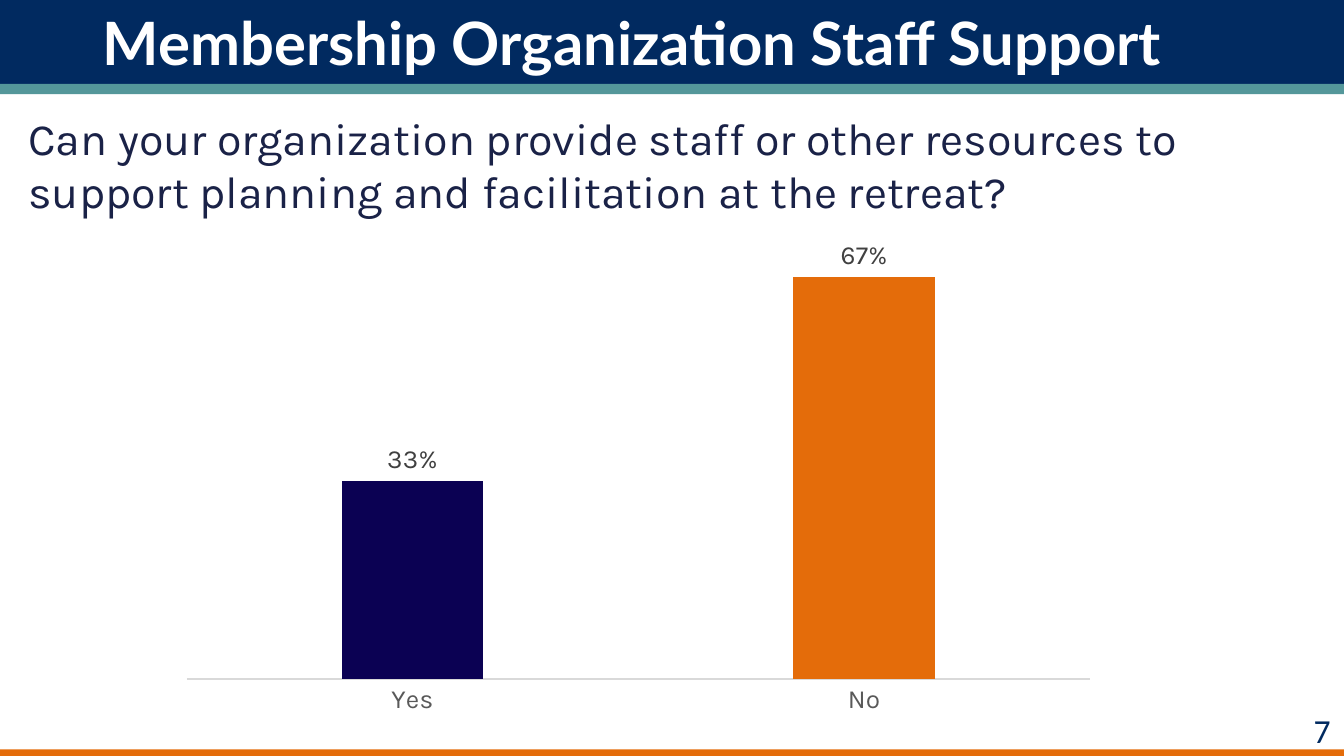
from pptx import Presentation
from pptx.chart.data import CategoryChartData
from pptx.dml.color import RGBColor
from pptx.enum.chart import XL_CHART_TYPE, XL_LABEL_POSITION, XL_TICK_MARK
from pptx.enum.shapes import MSO_SHAPE
from pptx.enum.text import MSO_ANCHOR, PP_ALIGN
from pptx.util import Pt

RECTANGLE = MSO_SHAPE.RECTANGLE
COLUMNS = XL_CHART_TYPE.COLUMN_CLUSTERED
OUTSIDE_END = XL_LABEL_POSITION.OUTSIDE_END
NO_TICKS = XL_TICK_MARK.NONE
TOP, MIDDLE = MSO_ANCHOR.TOP, MSO_ANCHOR.MIDDLE
LEFT, RIGHT = PP_ALIGN.LEFT, PP_ALIGN.RIGHT

WHITE = RGBColor(0xFF, 0xFF, 0xFF)
BLACK = RGBColor(0x00, 0x00, 0x00)
NAVY = RGBColor(0x01, 0x2A, 0x60)
TEAL = RGBColor(0x54, 0x97, 0x9A)
ORANGE = RGBColor(0xE4, 0x6C, 0x0A)
INK = RGBColor(0x1A, 0x22, 0x47)
INDIGO = RGBColor(0x0B, 0x01, 0x53)
AXIS_GRAY = RGBColor(0xD9, 0xD9, 0xD9)
CATEGORY_GRAY = RGBColor(0x59, 0x59, 0x59)
LABEL_GRAY = RGBColor(0x40, 0x40, 0x40)

SLIDE_WIDTH, SLIDE_HEIGHT = 720, 405


def style_font(font, name, size, color, bold=False):
    font.name = name
    font.size = Pt(size)
    font.color.rgb = color
    font.bold = bold


def write_text(frame, text, *, font, size, color, bold=False, align=LEFT,
               anchor=TOP, inset_left=7.2, inset_top=3.6):
    frame.word_wrap = True
    frame.vertical_anchor = anchor
    frame.margin_left = Pt(inset_left)
    frame.margin_right = Pt(7.2)
    frame.margin_top = Pt(inset_top)
    frame.margin_bottom = Pt(3.6)
    paragraph = frame.paragraphs[0]
    paragraph.alignment = align
    run = paragraph.add_run()
    run.text = text
    style_font(run.font, font, size, color, bold)


class SurveySlide:
    heading_font = "Lato"
    body_font = "Karla"
    number_font = "Calibri"
    chart_size = 14

    def __init__(self, presentation):
        self.slide = presentation.slides.add_slide(presentation.slide_layouts[6])

    def band(self, top, height, color):
        band = self.slide.shapes.add_shape(
            RECTANGLE, 0, Pt(top), Pt(SLIDE_WIDTH), Pt(height))
        band.shadow.inherit = False
        band.fill.solid()
        band.fill.fore_color.rgb = color
        band.line.fill.background()

    def text(self, left, top, width, height, text, **style):
        box = self.slide.shapes.add_textbox(
            Pt(left), Pt(top), Pt(width), Pt(height))
        write_text(box.text_frame, text, **style)

    def column_chart(self, left, top, width, height, shares, colors):
        data = CategoryChartData(number_format="0%")
        data.categories = list(shares)
        data.add_series("Series 1", list(shares.values()))
        chart = self.slide.shapes.add_chart(
            COLUMNS, Pt(left), Pt(top), Pt(width), Pt(height), data).chart
        chart.has_legend = False
        chart.has_title = False
        style_font(chart.font, self.body_font, self.chart_size, BLACK)

        categories = chart.category_axis
        categories.major_tick_mark = NO_TICKS
        categories.minor_tick_mark = NO_TICKS
        categories.format.line.color.rgb = AXIS_GRAY
        categories.format.line.width = Pt(0.75)
        style_font(categories.tick_labels.font, self.body_font,
                   self.chart_size, CATEGORY_GRAY)

        values = chart.value_axis
        values.visible = False
        values.has_major_gridlines = False
        values.minimum_scale = 0
        values.maximum_scale = 0.8

        plot = chart.plots[0]
        plot.gap_width = 219
        plot.overlap = -27
        plot.vary_by_categories = False

        answers = plot.series[0]
        answers.format.fill.solid()
        answers.format.fill.fore_color.rgb = colors[0]
        for index, color in enumerate(colors[1:], start=1):
            column = answers.points[index].format.fill
            column.solid()
            column.fore_color.rgb = color

        labels = answers.data_labels
        labels.show_value = True
        labels.position = OUTSIDE_END
        labels.number_format = "0%"
        labels.number_format_is_linked = False
        style_font(labels.font, self.body_font, self.chart_size, LABEL_GRAY)


def main():
    presentation = Presentation()
    presentation.slide_width = Pt(SLIDE_WIDTH)
    presentation.slide_height = Pt(SLIDE_HEIGHT)
    survey = SurveySlide(presentation)

    survey.band(0, 45, NAVY)
    survey.band(45, 5.5, TEAL)
    survey.text(678, 377, 42, 29, "7", font=survey.number_font, size=18,
                color=NAVY, align=RIGHT)
    survey.band(401.5, 3.5, ORANGE)
    survey.text(-0.7, 52.5, 648, 66,
                "Can your organization provide staff or other resources to "
                "support planning and facilitation at the retreat?",
                font=survey.body_font, size=24, color=INK,
                inset_left=16, inset_top=6.6)
    survey.text(48, 0, 644.5, 45, "Membership Organization Staff Support",
                font=survey.heading_font, size=32, color=WHITE, bold=True,
                anchor=MIDDLE)
    survey.column_chart(90, 101, 504, 288, {"Yes": 0.33, "No": 0.67},
                        [INDIGO, ORANGE])

    presentation.save("out.pptx")


if __name__ == "__main__":
    main()
